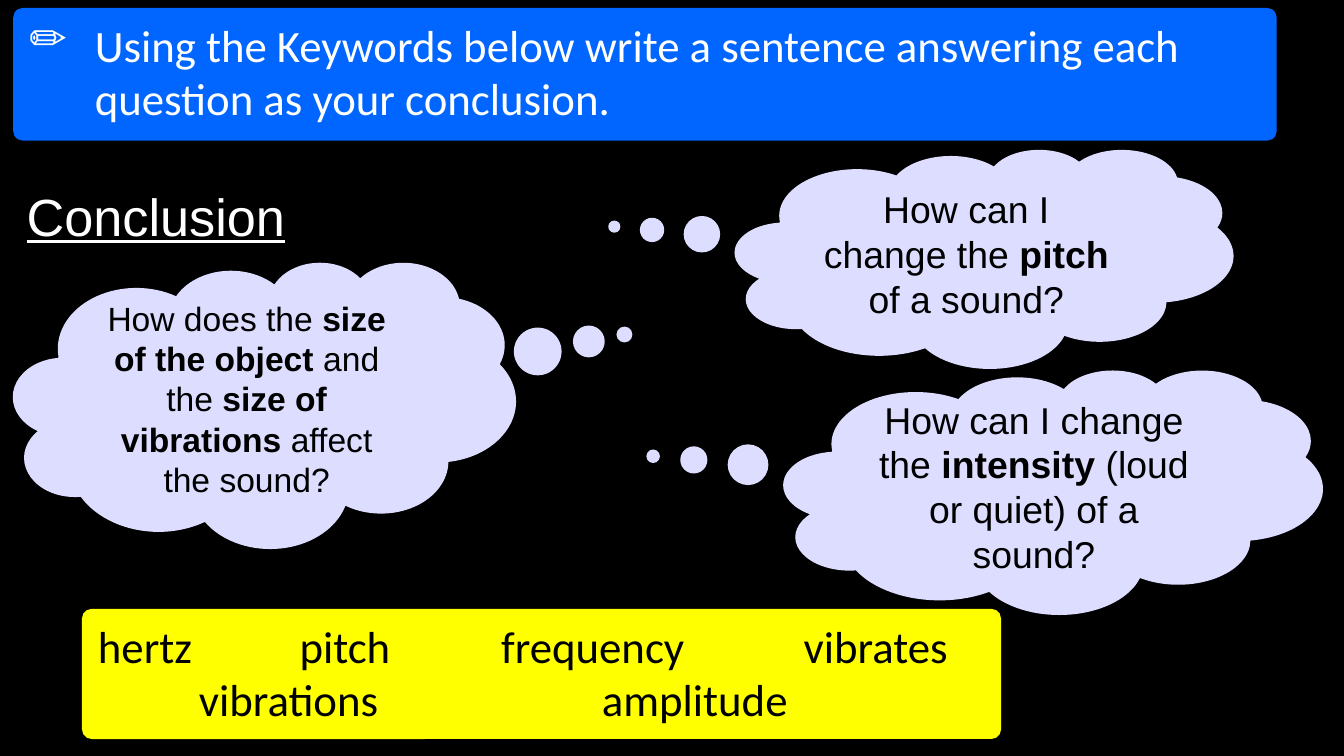
from lxml.etree import SubElement
from pptx import Presentation
from pptx.dml.color import RGBColor
from pptx.enum.shapes import MSO_SHAPE
from pptx.enum.text import MSO_ANCHOR, MSO_AUTO_SIZE, PP_ALIGN
from pptx.oxml.ns import qn
from pptx.util import Cm, Pt

# Content: boxes are left, top, width, height in cm; runs are (text, bold)
TITLE = "Conclusion"
TASK = "Using the Keywords below write a sentence answering each question as your conclusion."
KEYWORDS = ["hertz\t\tpitch\t\tfrequency\t\tvibrates", "\tvibrations\t\t\tamplitude"]
QUESTIONS = [
    ((13.89, 2.82, 9.42, 4.14), (-0.742, -0.146), 20,
     [("How can I change the ", False), ("pitch", True), (" of a sound?", False)]),
    ((14.81, 6.99, 10.19, 4.62), (-0.742, -0.146), 20,
     [("How can I change the ", False), ("intensity", True),
      (" (loud or quiet) of a sound?", False)]),
    ((0.25, 4.95, 9.5, 5.41), (0.716, -0.246), 18,
     [("How does the ", False), ("size of the object ", True), ("and the ", False),
      ("size of vibrations ", True), ("affect the sound?", False)]),
]
TITLE_BOX = (0.25, 3.35, 20.83, 1.45)
TASK_BOX = (0.25, 0.15, 23.88, 2.51)
KEYWORD_BOX = (1.55, 11.51, 17.37, 2.46)
TAB_STEP = 1.905
BULLET_INDENT = 1.24
ROUNDING = (0.074,)


def paint(fill, color):
    fill.solid()
    fill.fore_color.rgb = RGBColor.from_string(color)


def add_run(p, text, size, font, color, bold=None):
    r = p.add_run()
    r.text = text
    r.font.size = Pt(size)
    r.font.name = font
    r.font.bold = bold
    paint(r.font.fill, color)
    return r


def add_box(s, kind, box, adjustments, color, anchor):
    sp = s.shapes.add_shape(kind, *map(Cm, box))
    for i, value in enumerate(adjustments):
        sp.adjustments[i] = value
    paint(sp.fill, color)
    sp.line.fill.background()
    sp.shadow.inherit = False
    tf = sp.text_frame
    tf.word_wrap = True
    tf.vertical_anchor = anchor
    return tf


prs = Presentation()
prs.slide_width, prs.slide_height = Cm(25.4), Cm(14.29)
s = prs.slides.add_slide(prs.slide_layouts[5])
paint(s.background.fill, "000000")

# Title
title = s.shapes.title
title.left, title.top, title.width, title.height = map(Cm, TITLE_BOX)
tf = title.text_frame
tf.vertical_anchor = MSO_ANCHOR.TOP
tf.auto_size = MSO_AUTO_SIZE.SHAPE_TO_FIT_TEXT
p = tf.paragraphs[0]
p.alignment = PP_ALIGN.LEFT
add_run(p, TITLE, 28, "Arial", "FFFFFF").font.underline = True

# Question clouds
for box, tail, size, runs in QUESTIONS:
    tf = add_box(s, MSO_SHAPE.CLOUD_CALLOUT, box, tail, "DDDDFF", MSO_ANCHOR.MIDDLE)
    p = tf.paragraphs[0]
    p.alignment = PP_ALIGN.CENTER
    for text, bold in runs:
        add_run(p, text, size, "Arial", "000000", bold)

# Task banner with a pencil bullet
tf = add_box(s, MSO_SHAPE.ROUNDED_RECTANGLE, TASK_BOX, ROUNDING, "0066FF", MSO_ANCHOR.TOP)
p = tf.paragraphs[0]
p.alignment = PP_ALIGN.LEFT
pPr = p._p.get_or_add_pPr()
pPr.set("marL", str(Cm(BULLET_INDENT)))
pPr.set("indent", str(-Cm(BULLET_INDENT)))
SubElement(pPr, qn("a:buChar"), char="✏")
add_run(p, TASK, 24, "Calibri", "FFFFFF")

# Keywords on evenly spaced tab stops
tf = add_box(s, MSO_SHAPE.ROUNDED_RECTANGLE, KEYWORD_BOX, ROUNDING, "FFFF00", MSO_ANCHOR.TOP)
for i, line in enumerate(KEYWORDS):
    p = tf.add_paragraph() if i else tf.paragraphs[0]
    p.alignment = PP_ALIGN.LEFT
    tabs = SubElement(p._p.get_or_add_pPr(), qn("a:tabLst"))
    for n in range(1, 8):
        SubElement(tabs, qn("a:tab"), pos=str(Cm(n * TAB_STEP)), algn="l")
    add_run(p, line, 24, "Calibri", "000000")

prs.save("out.pptx")
